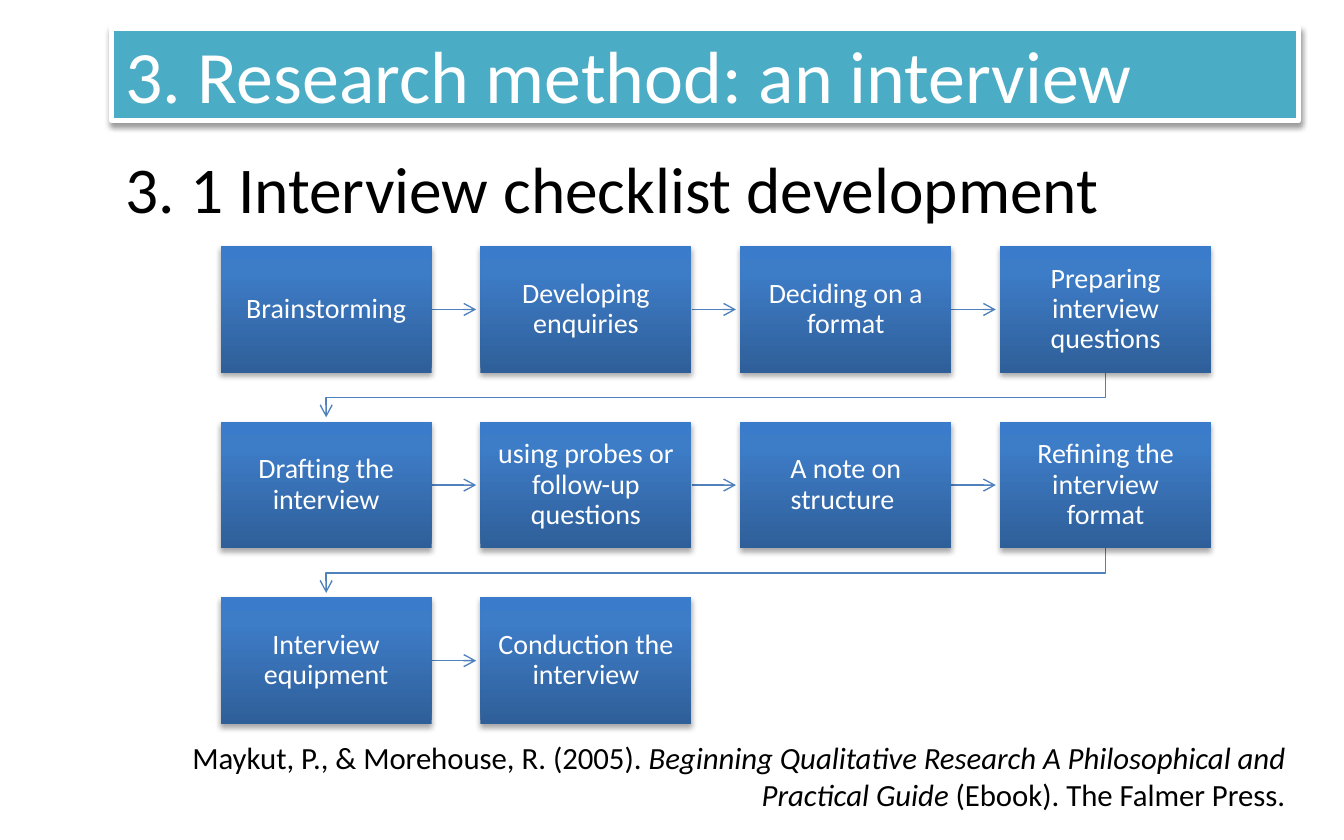
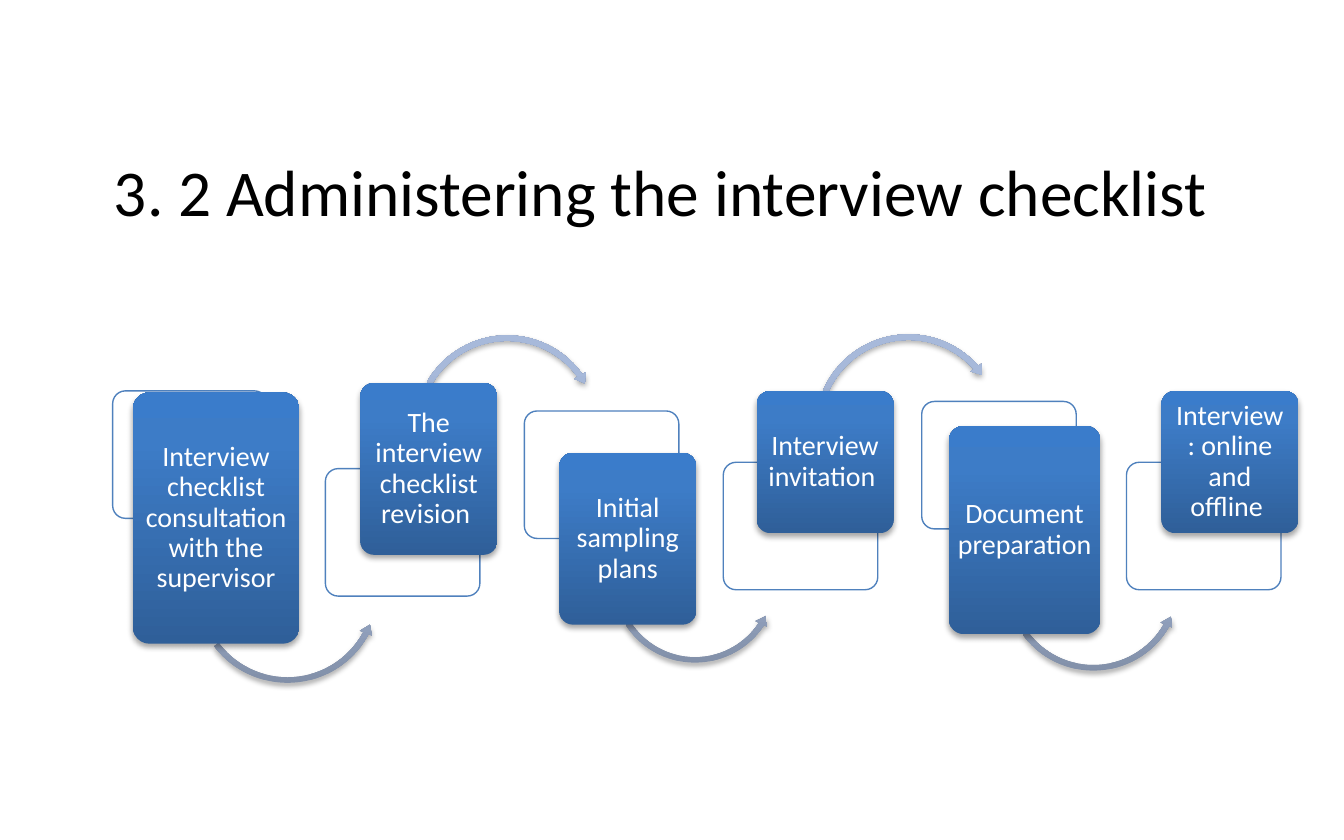
from copy import deepcopy
from lxml.etree import SubElement
from pptx import Presentation
from pptx.dml.color import RGBColor
from pptx.enum.shapes import MSO_CONNECTOR, MSO_SHAPE
from pptx.enum.text import MSO_ANCHOR, MSO_AUTO_SIZE, PP_ALIGN
from pptx.oxml.ns import qn
from pptx.util import Cm, Pt

WHITE = RGBColor(0xFF, 0xFF, 0xFF)
BLACK = RGBColor(0x00, 0x00, 0x00)
TEAL = RGBColor(0x4B, 0xAC, 0xC6)
BLUE = RGBColor(0x4F, 0x81, 0xBD)
NODE_STOPS = [
    (0, RGBColor(0x2F, 0x5F, 0x99)),
    (0.8, RGBColor(0x3D, 0x7C, 0xC7)),
    (1, RGBColor(0x3A, 0x7C, 0xCB)),
]
ARROW_STOPS = [
    (0, RGBColor(0x81, 0x8F, 0xA8)),
    (0.8, RGBColor(0xA7, 0xB9, 0xDA)),
    (1, RGBColor(0xA7, 0xBA, 0xDC)),
]
FONT = "Calibri"
TEXT_W = 22.43
HEADING_H = 1.65

TITLE = "3. Research method: an interview"
CHECKLIST_HEADING = "3. 1 Interview checklist development"
CHECKLIST = [
    ["Brainstorming", "Developing enquiries", "Deciding on a format",
     "Preparing interview questions"],
    ["Drafting the interview", "using probes or follow-up questions",
     "A note on structure ", "Refining the interview format"],
    ["Interview equipment", "Conduction the interview"],
]
CITATION = [
    ("Maykut, P., & Morehouse, R. (2005). ", False),
    ("Beginning Qualitative Research A Philosophical and Practical Guide", True),
    (" (Ebook). The Falmer Press.", False),
]
GRID_LEFT, GRID_TOP = 4.17, 4.65
NODE_W, NODE_H = 3.99, 2.4
COL_STEP, ROW_STEP = 4.91, 3.32
ARROW_LEN, ARROW_BEND = 0.84, 0.46

ADMIN_HEADING = "3. 2 Administering the interview checklist"
LOWER, UPPER = MSO_SHAPE.LEFT_CIRCULAR_ARROW, MSO_SHAPE.CIRCULAR_ARROW
FRAME_W, FRAME_H = 2.92, 2.41
# step text, frame corner, node box, arrow: kind, left, top, size,
# shaft %, head angle, end angle, start angle, head %
ADMIN_STEPS = [
    ("Interview checklist consultation with the supervisor",
     (2.13, 7.39), (2.51, 7.42, 3.15, 4.75),
     (LOWER, 3.63, 9.37, 3.61, 2.9, 6.01, 28.22, 143.03, 3.4)),
    ("The interview checklist revision ",
     (6.15, 8.86), (6.81, 7.24, 2.59, 3.25),
     (UPPER, 7.77, 6.27, 3.63, 2.9, 5.95, 324.46, 209.59, 3.4)),
    ("Initial sampling plans",
     (9.91, 7.77), (10.57, 8.56, 2.59, 3.25),
     (LOWER, 11.51, 9.35, 3.25, 3.2, 6.68, 33.21, 147.35, 3.8)),
    ("Interview invitation ",
     (13.67, 8.74), (14.3, 7.39, 2.59, 2.69),
     (UPPER, 15.34, 6.25, 3.66, 2.9, 5.92, 318.49, 203.59, 3.4)),
    ("Document preparation ",
     (17.42, 7.59), (17.93, 8.05, 2.87, 3.94),
     (LOWER, 18.95, 9.32, 3.43, 3.1, 6.33, 29.5, 143.98, 3.6)),
    ("Interview : online and offline ",
     (21.29, 8.74), (21.95, 7.39, 2.59, 2.69), None),
]


def place(sp, left, top, width, height):
    sp.left, sp.top, sp.width, sp.height = map(Cm, (left, top, width, height))


def format_text(sp, size, color, align=PP_ALIGN.LEFT):
    tf = sp.text_frame
    tf.word_wrap = True
    tf.auto_size = MSO_AUTO_SIZE.NONE
    tf.vertical_anchor = MSO_ANCHOR.MIDDLE
    for p in tf.paragraphs:
        p.alignment = align
        for r in p.runs:
            r.font.name = FONT
            r.font.size = Pt(size)
            r.font.color.rgb = color


def add_shadow(sp, alpha, dist):
    sp.shadow.inherit = False
    effects = sp.element.spPr.find(qn("a:effectLst"))
    shadow = SubElement(effects, qn("a:outerShdw"), blurRad=str(Pt(3.1)),
                        dist=str(Pt(dist)), dir="5400000", rotWithShape="0")
    color = SubElement(shadow, qn("a:srgbClr"), val=str(BLACK))
    SubElement(color, qn("a:alpha"), val=str(alpha * 1000))


def fill_gradient(sp, stops):
    sp.fill.gradient()
    sp.fill.gradient_angle = 90
    gs_list = sp.element.spPr.find(".//" + qn("a:gsLst"))
    gs_list.append(deepcopy(gs_list[-1]))
    for stop, (position, color) in zip(sp.fill.gradient_stops, stops):
        stop.position = position
        stop.color.rgb = color
    sp.line.fill.background()
    add_shadow(sp, 35, 1.8)


def add_node(s, kind, box, text, insets):
    sp = s.shapes.add_shape(kind, *map(Cm, box))
    if kind == MSO_SHAPE.ROUNDED_RECTANGLE:
        sp.adjustments[0] = 0.1
    fill_gradient(sp, NODE_STOPS)
    tf = sp.text_frame
    tf.text = text
    tf.margin_left = tf.margin_right = Cm(insets[0])
    tf.margin_top = tf.margin_bottom = Cm(insets[1])
    format_text(sp, 15, WHITE, PP_ALIGN.CENTER)
    tf.paragraphs[0].line_spacing = 0.9


def add_arrow(s, points):
    points = [(Cm(x), Cm(y)) for x, y in points]
    if len(points) == 2:
        sp = s.shapes.add_connector(MSO_CONNECTOR.STRAIGHT, *points[0], *points[1])
    else:
        builder = s.shapes.build_freeform(*points[0])
        builder.add_line_segments(points[1:], close=False)
        sp = builder.convert_to_shape()
        sp.fill.background()
    sp.line.color.rgb = BLUE
    sp.line.width = Pt(0.75)
    SubElement(sp.line._get_or_add_ln(), qn("a:tailEnd"), type="arrow")
    SubElement(sp.element.spPr, qn("a:effectLst"))


def add_curved_arrow(s, kind, left, top, size, shaft, head_angle, end, start, head):
    sp = s.shapes.add_shape(kind, Cm(left), Cm(top), Cm(size), Cm(size))
    values = [shaft / 100, head_angle * 0.6, end * 0.6, start * 0.6, head / 100]
    for i, value in enumerate(values):
        sp.adjustments[i] = value
    fill_gradient(sp, ARROW_STOPS)


def add_frame(s, left, top):
    sp = s.shapes.add_shape(MSO_SHAPE.ROUNDED_RECTANGLE, Cm(left), Cm(top),
                            Cm(FRAME_W), Cm(FRAME_H))
    sp.adjustments[0] = 0.1
    sp.fill.solid()
    sp.fill.fore_color.rgb = WHITE
    color = sp.element.spPr.find(qn("a:solidFill"))[0]
    SubElement(color, qn("a:alpha"), val="90000")
    sp.line.color.rgb = BLUE
    sp.line.width = Pt(0.75)
    sp.shadow.inherit = False


def set_heading(sp, text, left, top):
    place(sp, left, top, TEXT_W, HEADING_H)
    sp.text_frame.text = text
    format_text(sp, 35, BLACK)


def build_checklist(s):
    title = s.shapes.title
    place(title, 2.11, 0.53, TEXT_W, 1.75)
    title.text_frame.text = TITLE
    format_text(title, 39.6, WHITE)
    title.fill.solid()
    title.fill.fore_color.rgb = TEAL
    title.line.color.rgb = WHITE
    title.line.width = Pt(3)
    add_shadow(title, 38, 1.6)

    set_heading(s.shapes.add_textbox(0, 0, 0, 0), CHECKLIST_HEADING, 2.13, 2.72)

    for row, steps in enumerate(CHECKLIST):
        for col, text in enumerate(steps):
            x, y = GRID_LEFT + col * COL_STEP, GRID_TOP + row * ROW_STEP
            right, middle = x + NODE_W, y + NODE_H / 2
            bottom, center = y + NODE_H, x + NODE_W / 2
            if col < len(steps) - 1:
                add_arrow(s, [(right, middle), (right + ARROW_LEN, middle)])
            elif row < len(CHECKLIST) - 1:
                first = GRID_LEFT + NODE_W / 2
                bend = bottom + ARROW_BEND
                add_arrow(s, [(center, bottom), (center, bend),
                              (first, bend), (first, bottom + ARROW_LEN)])
            add_node(s, MSO_SHAPE.RECTANGLE, (x, y, NODE_W, NODE_H), text, (0.3, 0.3))

    sp = s.shapes.add_textbox(0, 0, 0, 0)
    place(sp, 2.11, 13.87, TEXT_W, 1.6)
    p = sp.text_frame.paragraphs[0]
    for text, italic in CITATION:
        r = p.add_run()
        r.text = text
        r.font.italic = italic
    format_text(sp, 16.5, BLACK, PP_ALIGN.RIGHT)


def build_administering(s):
    set_heading(s.shapes.title, ADMIN_HEADING, 1.9, 2.77)
    for text, frame, box, arrow in ADMIN_STEPS:
        add_frame(s, *frame)
        if arrow:
            add_curved_arrow(s, *arrow)
        add_node(s, MSO_SHAPE.ROUNDED_RECTANGLE, box, text, (0.08, 0.05))


def main():
    prs = Presentation()
    prs.slide_width, prs.slide_height = Cm(25.4), Cm(15.88)
    for build in (build_checklist, build_administering):
        build(prs.slides.add_slide(prs.slide_layouts[5]))
    prs.save("out.pptx")


if __name__ == "__main__":
    main()
